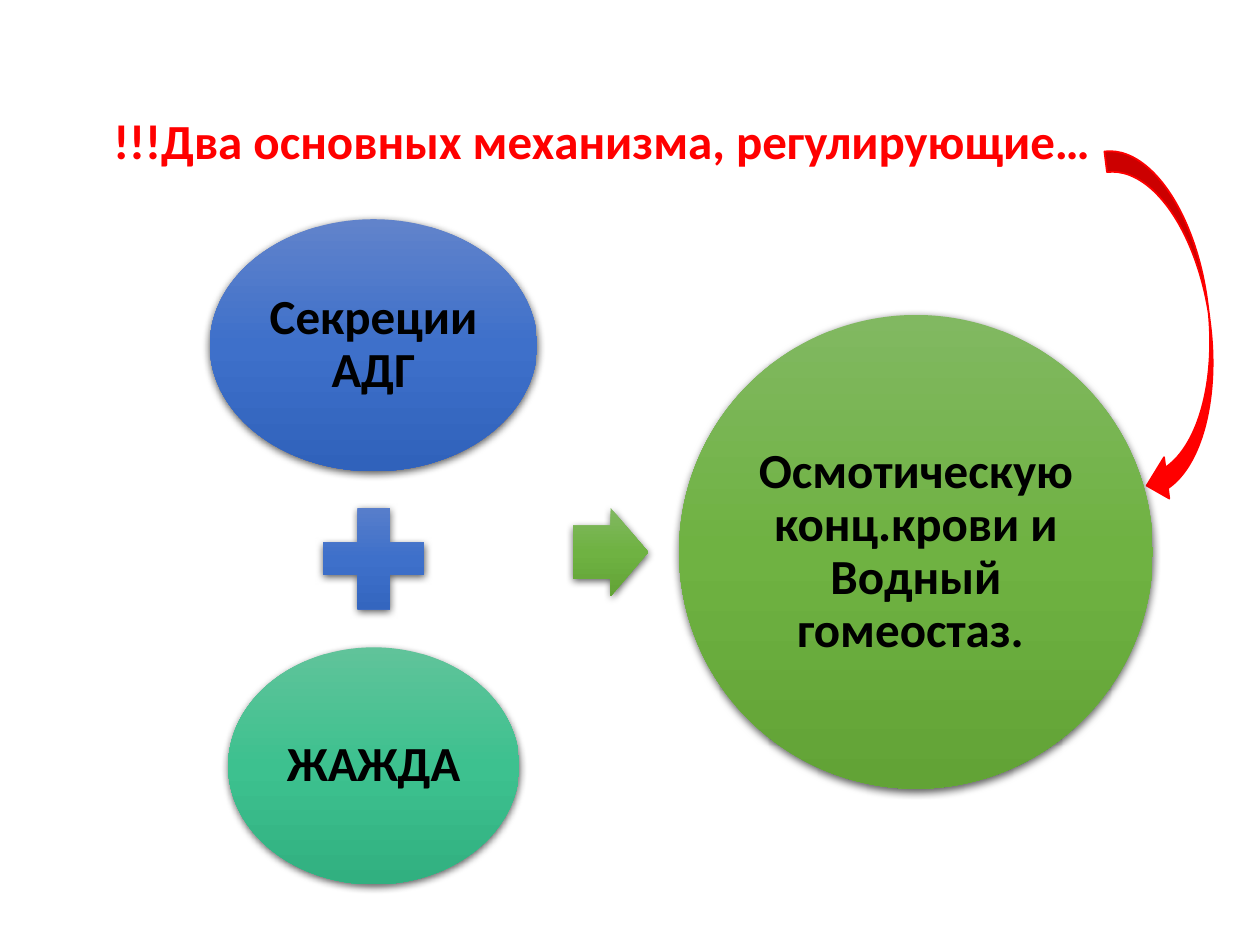
from lxml.etree import SubElement
from pptx import Presentation
from pptx.dml.color import RGBColor
from pptx.enum.shapes import MSO_SHAPE
from pptx.enum.text import MSO_ANCHOR, MSO_AUTO_SIZE, PP_ALIGN
from pptx.oxml.ns import qn
from pptx.util import Cm, Pt

RED = RGBColor(0xFF, 0x00, 0x00)
BLACK = RGBColor(0x00, 0x00, 0x00)
BLUES = [RGBColor(0x61, 0x83, 0xCB), RGBColor(0x3E, 0x70, 0xCA), RGBColor(0x30, 0x62, 0xBB)]
TEALS = [RGBColor(0x60, 0xC3, 0x9A), RGBColor(0x3D, 0xC1, 0x8F), RGBColor(0x31, 0xB0, 0x80)]
GREENS = [RGBColor(0x81, 0xB8, 0x61), RGBColor(0x6F, 0xB2, 0x42), RGBColor(0x62, 0xA3, 0x36)]


class Deck:
    font = "Calibri"
    size = Pt(28)

    def __init__(self):
        self.prs = Presentation()
        self.prs.slide_width, self.prs.slide_height = Cm(25.4), Cm(19.05)
        self.s = self.prs.slides.add_slide(self.prs.slide_layouts[5])

    def label(self, tf, text, color, align):
        tf.word_wrap = True
        p = tf.paragraphs[0]
        p.alignment = align
        r = p.add_run()
        r.text = text
        r.font.name, r.font.size, r.font.bold = self.font, self.size, True
        r.font.color.rgb = color
        return p

    def title(self, text, x, y, w, h):
        sp = self.s.shapes.title
        sp.left, sp.top, sp.width, sp.height = Cm(x), Cm(y), Cm(w), Cm(h)
        tf = sp.text_frame
        tf.auto_size = MSO_AUTO_SIZE.SHAPE_TO_FIT_TEXT
        tf.vertical_anchor = MSO_ANCHOR.TOP
        self.label(tf, text, RED, PP_ALIGN.LEFT)

    def shape(self, kind, x, y, w, h):
        sp = self.s.shapes.add_shape(kind, Cm(x), Cm(y), Cm(w), Cm(h))
        sp.shadow.inherit = False
        return sp

    def curved_arrow(self, x, y, w, h, rotation):
        sp = self.shape(MSO_SHAPE.CURVED_LEFT_ARROW, x, y, w, h)
        sp.rotation = rotation
        sp.fill.solid()
        sp.fill.fore_color.rgb = RED
        sp.line.color.rgb = RED
        sp.line.width = Pt(1)

    def glossy(self, kind, x, y, w, h, colors):
        sp = self.shape(kind, x, y, w, h)
        sp.fill.gradient()
        sp.fill.gradient_angle = 270
        sp.line.fill.background()
        spPr = sp._element.spPr
        stops = spPr.find(qn("a:gradFill")).find(qn("a:gsLst"))
        for stop in list(stops):
            stops.remove(stop)
        for i, color in enumerate(colors):
            stop = SubElement(stops, qn("a:gs"), pos=str(i * 50000))
            SubElement(stop, qn("a:srgbClr"), val=str(color))
        shadow = SubElement(spPr.find(qn("a:effectLst")), qn("a:outerShdw"),
                            blurRad=str(Pt(4.5)), dist=str(Pt(1.5)),
                            dir="5400000", algn="ctr", rotWithShape="0")
        black = SubElement(shadow, qn("a:srgbClr"), val=str(BLACK))
        SubElement(black, qn("a:alpha"), val="63000")
        return sp

    def circle(self, text, x, y, w, h, colors):
        tf = self.glossy(MSO_SHAPE.OVAL, x, y, w, h, colors).text_frame
        tf.margin_left = tf.margin_right = tf.margin_top = tf.margin_bottom = Cm(0.1)
        tf.vertical_anchor = MSO_ANCHOR.MIDDLE
        self.label(tf, text, BLACK, PP_ALIGN.CENTER).line_spacing = 0.9


def main():
    d = Deck()
    d.title("!!!Два основных механизма, регулирующие…", 2.03, 2.11, 20.6, 1.45)
    d.curved_arrow(22.71, 2.92, 1.68, 7.21, 352.8)
    d.circle("Секреции АДГ", 4.23, 4.42, 6.6, 5.08, BLUES)
    d.glossy(MSO_SHAPE.MATH_PLUS, 6.15, 9.88, 2.77, 2.77, BLUES)
    d.circle("ЖАЖДА", 4.6, 13.05, 5.87, 4.78, TEALS)
    arrow = d.glossy(MSO_SHAPE.RIGHT_ARROW, 11.55, 10.24, 1.52, 1.78, GREENS)
    arrow.adjustments[0] = 0.6
    d.circle("Осмотическую конц.крови и Водный гомеостаз. ", 13.69, 6.35, 9.55, 9.55, GREENS)
    d.prs.save("out.pptx")


if __name__ == "__main__":
    main()
